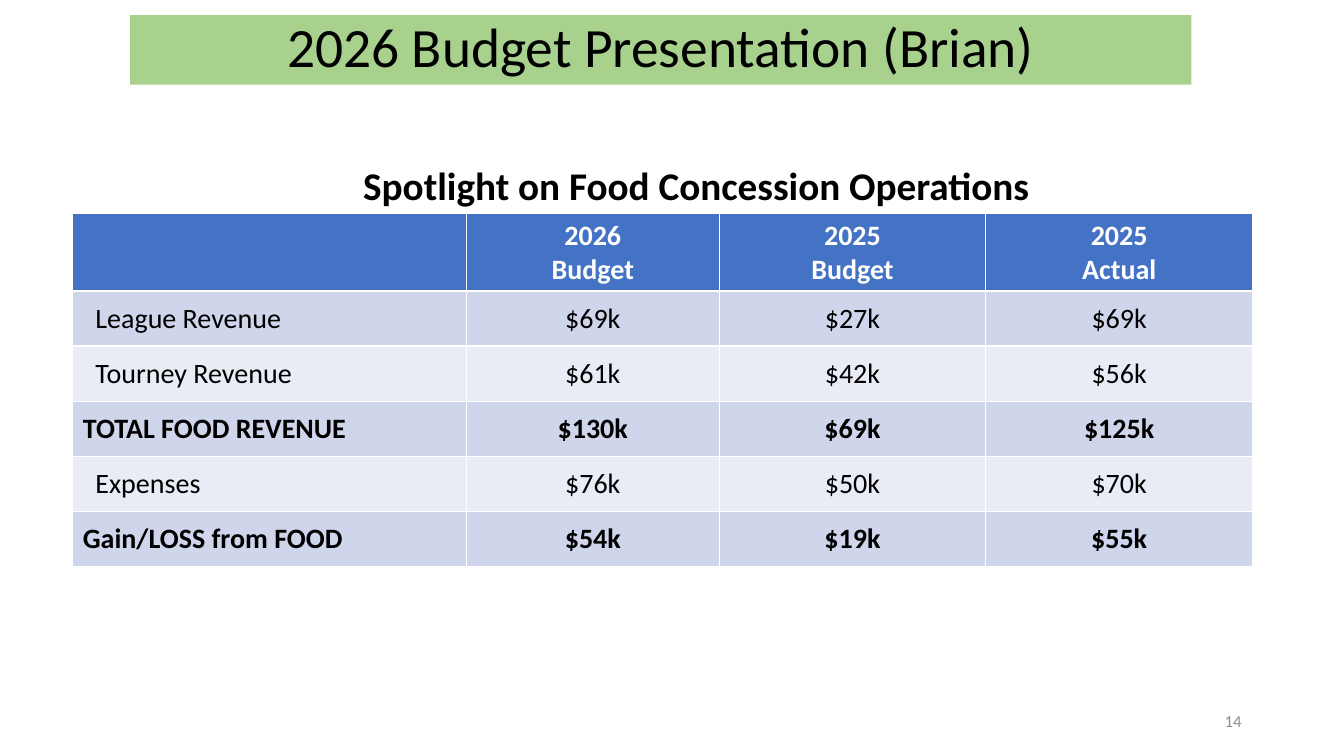
from pptx import Presentation
from pptx.dml.color import RGBColor
from pptx.enum.text import MSO_ANCHOR, MSO_AUTO_SIZE, PP_ALIGN
from pptx.util import Pt

LEFT, CENTER, RIGHT = PP_ALIGN.LEFT, PP_ALIGN.CENTER, PP_ALIGN.RIGHT
TOP, MIDDLE = MSO_ANCHOR.TOP, MSO_ANCHOR.MIDDLE
NO_AUTOFIT = MSO_AUTO_SIZE.NONE

TITLE = "2026 Budget Presentation (Brian)"
SUBTITLE = "Spotlight on Food Concession Operations"
PAGE_NUMBER = "14"
HEADINGS = ["", "2026\nBudget", "2025\nBudget", "2025\nActual"]
# label, amounts, is a total
ROWS = [
    ("League Revenue", ["$69k", "$27k", "$69k"], False),
    ("Tourney Revenue", ["$61k", "$42k", "$56k"], False),
    ("TOTAL FOOD REVENUE", ["$130k", "$69k", "$125k"], True),
    ("Expenses", ["$76k", "$50k", "$70k"], False),
    ("Gain/LOSS from FOOD", ["$54k", "$19k", "$55k"], True),
]

THEME = {
    "font": "Calibri",
    "title_fill": "A9D18E", "header_fill": "4472C4",
    "bands": ["CFD5EA", "E9EBF5"],
    "ink": "000000", "header_ink": "FFFFFF", "muted": "8C8C8C",
    "title": 39.6, "subtitle": 28, "table": 20, "number": 12,
}

PAGE_SIZE = (960, 540)
TITLE_AT = (93, 10.8, 758, 49.7)
SUBTITLE_AT = (83.5, 111.6, 827.3, 41.2)
NUMBER_AT = (678, 500.5, 216, 28.8)
TABLE_LEFT, TABLE_TOP = 52, 152.6
COLUMN_WIDTHS = [281, 181, 190, 191]
HEADER_HEIGHT, ROW_HEIGHT = 55.2, 39.4
CELL_INSET, LABEL_INDENT = 7.2, 9


def color(name):
    return RGBColor.from_string(name)


def paint(target, name):
    target.fill.solid()
    target.fill.fore_color.rgb = color(name)


def write(frame, text, size, ink=THEME["ink"], align=CENTER, bold=False):
    """Fill the first paragraph, with a line break at each newline."""
    para = frame.paragraphs[0]
    para.alignment = align
    for index, line in enumerate(text.split("\n")):
        if index:
            para.add_line_break()
        span = para.add_run()
        span.text = line
        span.font.name = THEME["font"]
        span.font.size = Pt(size)
        span.font.bold = bold
        span.font.color.rgb = color(ink)
    return para


def add_title(page):
    title = page.shapes.title
    title.left, title.top, title.width, title.height = map(Pt, TITLE_AT)
    paint(title, THEME["title_fill"])
    frame = title.text_frame
    frame.auto_size = NO_AUTOFIT
    frame.vertical_anchor = MIDDLE
    write(frame, TITLE, THEME["title"]).line_spacing = 0.9


def add_text(page, place, anchor, text, size, **style):
    frame = page.shapes.add_textbox(*map(Pt, place)).text_frame
    frame.word_wrap = True
    frame.vertical_anchor = anchor
    write(frame, text, size, **style)


def fill_cell(cell, text, fill, **style):
    paint(cell, fill)
    cell.vertical_anchor = MIDDLE
    if text:
        write(cell.text_frame, text, THEME["table"], **style)


def add_budget_table(page):
    heights = [HEADER_HEIGHT] + [ROW_HEIGHT] * len(ROWS)
    place = (TABLE_LEFT, TABLE_TOP, sum(COLUMN_WIDTHS), sum(heights))
    table = page.shapes.add_table(
        len(heights), len(HEADINGS), *map(Pt, place)).table
    for column, width in zip(table.columns, COLUMN_WIDTHS):
        column.width = Pt(width)
    for row, height in zip(table.rows, heights):
        row.height = Pt(height)

    for column, heading in enumerate(HEADINGS):
        fill_cell(table.cell(0, column), heading, THEME["header_fill"],
                  ink=THEME["header_ink"], bold=True)
    for index, (label, amounts, is_total) in enumerate(ROWS):
        band = THEME["bands"][index % 2]
        label_cell = table.cell(index + 1, 0)
        fill_cell(label_cell, label, band, align=LEFT, bold=is_total)
        if not is_total:
            label_cell.margin_left = Pt(CELL_INSET + LABEL_INDENT)
        for column, amount in enumerate(amounts, start=1):
            fill_cell(table.cell(index + 1, column), amount, band,
                      bold=is_total)


def main():
    deck = Presentation()
    deck.slide_width, deck.slide_height = map(Pt, PAGE_SIZE)
    page = deck.slides.add_slide(deck.slide_layouts.get_by_name("Title Only"))
    add_title(page)
    add_text(page, SUBTITLE_AT, TOP, SUBTITLE, THEME["subtitle"], bold=True)
    add_text(page, NUMBER_AT, MIDDLE, PAGE_NUMBER, THEME["number"],
             ink=THEME["muted"], align=RIGHT)
    add_budget_table(page)
    deck.save("out.pptx")


if __name__ == "__main__":
    main()
